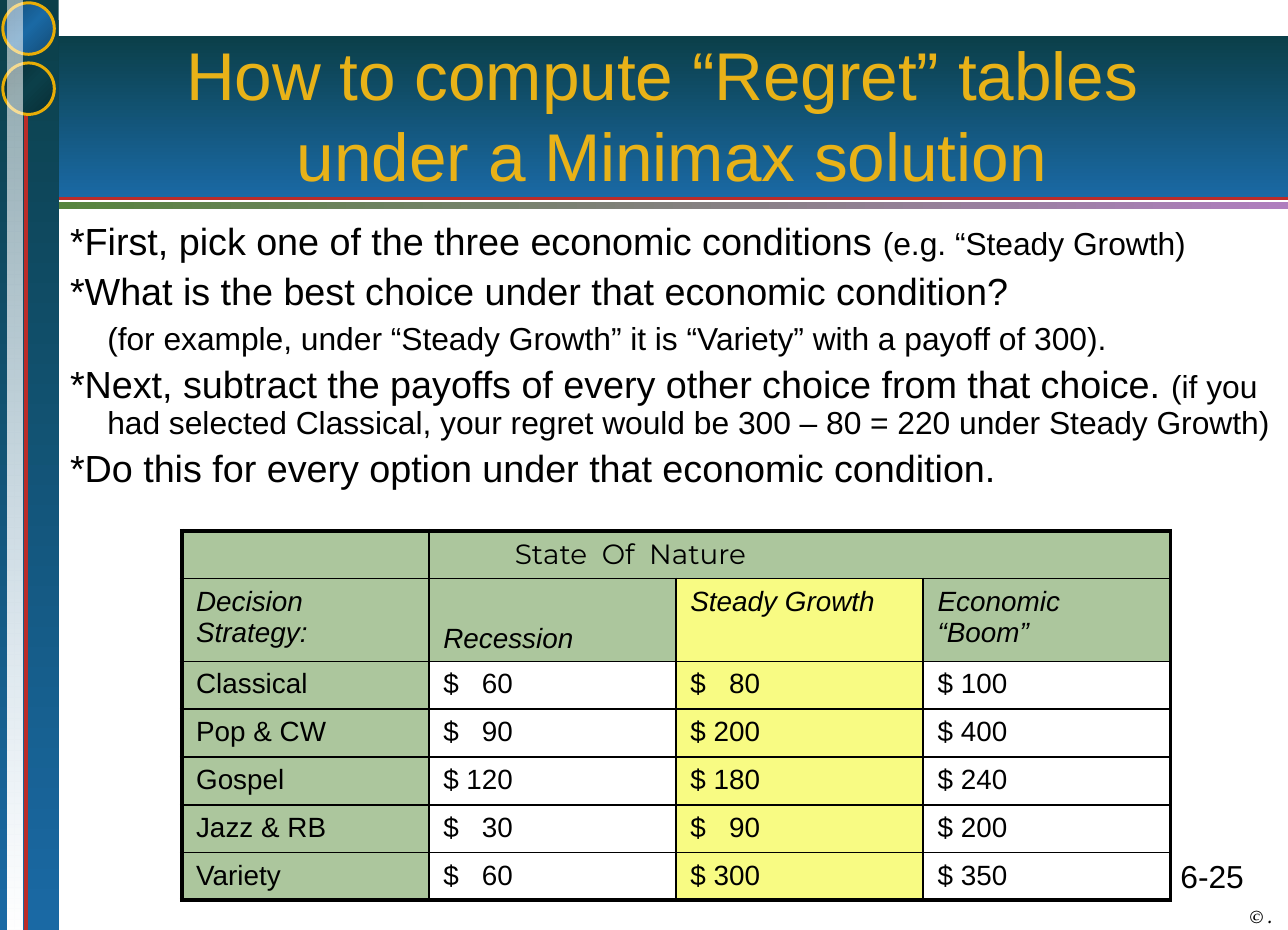
from dataclasses import dataclass

from lxml import etree
from pptx import Presentation
from pptx.dml.color import RGBColor
from pptx.enum.shapes import MSO_CONNECTOR as Connector, MSO_SHAPE as Shape
from pptx.enum.text import MSO_ANCHOR as Anchor, PP_ALIGN as Align
from pptx.oxml import parse_xml
from pptx.oxml.ns import nsdecls, qn
from pptx.util import Inches, Pt


@dataclass(frozen=True)
class Theme:
    sans: str = "Arial"
    display: str = "Montserrat"
    serif: str = "TeX Gyre Pagella"
    black: str = "000000"
    white: str = "FFFFFF"
    gold: str = "E8AD06"
    title_gold: str = "E8B218"
    red: str = "BB2C29"
    green: str = "5A8F3D"
    yellow: str = "F2F808"
    band: tuple = ("0B3F49", "1A69A4")
    stripe: tuple = ("538438", "AF7EBE")
    teal_disc: tuple = ("082D34", "0B3F49", "082D34")
    blue_disc: tuple = ("134B75", "1A69A4", "134B75")
    title_size: float = 34
    body_size: float = 19
    note_size: float = 16
    table_size: float = 14
    small_size: float = 9


THEME = Theme()

STEPS = [
    [("*First, pick one of the three economic conditions ", THEME.body_size),
     ("(e.g. “Steady Growth)", THEME.note_size)],
    [("*What is the best choice under that economic condition?", THEME.body_size)],
    [("(for example, under “Steady Growth” it is “Variety” with a payoff of 300).",
      THEME.note_size)],
    [("*Next, subtract the payoffs of every other choice from that choice. ",
      THEME.body_size),
     ("(if you had selected Classical, your regret would be 300 – 80 = 220 "
      "under Steady Growth)", THEME.note_size)],
    [("*Do this for every option under that economic condition.", THEME.body_size)],
]
PAYOFFS = [
    ["", "State  Of  Nature", "", ""],
    ["Decision Strategy:", "Recession", "Steady Growth", "Economic “Boom”"],
    ["Classical", "$   60", "$   80", "$ 100"],
    ["Pop & CW", "$   90", "$ 200", "$ 400"],
    ["Gospel", "$ 120", "$ 180", "$ 240"],
    ["Jazz & RB", "$   30", "$   90", "$ 200"],
    ["Variety", "$   60", "$ 300", "$ 350"],
]


def gradient_shape(slide, kind, box, colors, angle, outline=None, first_alpha=100):
    """Add a shape with evenly spaced gradient stops; angle is clockwise degrees."""
    shape = slide.shapes.add_shape(kind, *map(Inches, box))
    shape.shadow.inherit = False
    shape.fill.gradient()
    shape.fill.gradient_angle = 360 - angle
    stops = shape._element.spPr.find(qn("a:gradFill")).find(qn("a:gsLst"))
    for stop in list(stops):
        stops.remove(stop)
    for index, color in enumerate(colors):
        position = 100000 * index // (len(colors) - 1)
        stop = etree.SubElement(stops, qn("a:gs"), pos=str(position))
        paint = etree.SubElement(stop, qn("a:srgbClr"), val=color)
        if index == 0 and first_alpha < 100:
            etree.SubElement(paint, qn("a:alpha"), val=str(first_alpha * 1000))
    if outline:
        shape.line.color.rgb = RGBColor.from_string(outline)
        shape.line.width = Pt(1.5)
    else:
        shape.line.fill.background()


def rule(slide, start, end, width):
    line = slide.shapes.add_connector(
        Connector.STRAIGHT, *map(Inches, (*start, *end)))
    line.line.color.rgb = RGBColor.from_string(THEME.red)
    line.line.width = Pt(width)
    etree.SubElement(line._element.spPr, qn("a:effectLst"))


def text_frame_in(slide, box, margins=(0.09, 0.04), anchor=Anchor.TOP, wrap=True):
    frame = slide.shapes.add_textbox(*map(Inches, box)).text_frame
    frame.word_wrap = wrap
    frame.vertical_anchor = anchor
    frame.margin_left = frame.margin_right = Inches(margins[0])
    frame.margin_top = frame.margin_bottom = Inches(margins[1])
    return frame


def style(run, size, font=THEME.sans, color=THEME.black, bold=False, italic=False):
    run.font.size = Pt(size)
    run.font.name = font
    run.font.color.rgb = RGBColor.from_string(color)
    run.font.bold = bold
    run.font.italic = italic


def add_banner(slide, left, top, width, height):
    gradient_shape(slide, Shape.RECTANGLE, (left, top, width, height), THEME.band, 90)
    gradient_shape(slide, Shape.RECTANGLE, (left, top + height + 0.03, width, 0.05),
                   THEME.stripe, 0)
    rule(slide, (left, top + height + 0.01), (left + width, top + height + 0.01), 1.5)


def add_sidebar(slide, left, top, width, height):
    gradient_shape(slide, Shape.RECTANGLE, (left, top, width, height), THEME.band, 90)
    rule(slide, (left + 0.18, top + 0.79), (left + 0.18, top + height), 2.25)
    for offset, colors in ((0.44, THEME.teal_disc), (0.02, THEME.blue_disc)):
        gradient_shape(slide, Shape.OVAL, (left + 0.02, top + offset, 0.36, 0.36),
                       colors, 45, THEME.gold)
    gradient_shape(slide, Shape.RECTANGLE, (left + 0.05, top, 0.11, height),
                   (THEME.white, THEME.white), 90, first_alpha=52)


def add_title(slide, *box):
    frame = text_frame_in(slide, box, anchor=Anchor.MIDDLE)
    paragraph = frame.paragraphs[0]
    paragraph.text = "How to compute “Regret” tables \vunder a Minimax solution"
    paragraph.alignment = Align.CENTER
    for run in paragraph.runs:
        style(run, THEME.title_size, color=THEME.title_gold)
        fill = run._r.get_or_add_rPr().find(qn("a:solidFill"))
        fill.addnext(parse_xml(
            f'<a:effectLst {nsdecls("a")}><a:outerShdw dist="38100" dir="2700000">'
            f'<a:srgbClr val="{THEME.black}"/></a:outerShdw></a:effectLst>'))


def add_steps(slide, *box):
    frame = text_frame_in(slide, box)
    for index, parts in enumerate(STEPS):
        paragraph = frame.paragraphs[0] if index == 0 else frame.add_paragraph()
        paragraph.line_spacing = 0.9
        paragraph.space_before = Pt(4.5)
        hanging = parts[0][0].startswith("*")
        properties = paragraph._p.get_or_add_pPr()
        properties.set("marL", str(Inches(0.26)))
        properties.set("indent", str(Inches(-0.26 if hanging else 0)))
        for text, size in parts:
            run = paragraph.add_run()
            run.text = text
            style(run, size)


def set_borders(cell, widths):
    """Draw left, right, top and bottom borders of the given point widths."""
    properties = cell._tc.get_or_add_tcPr()
    for index, (side, width) in enumerate(zip("LRTB", widths)):
        properties.insert(index, parse_xml(
            f'<a:ln{side} {nsdecls("a")} w="{Pt(width)}"><a:solidFill>'
            f'<a:srgbClr val="{THEME.black}"/></a:solidFill></a:ln{side}>'))


def set_tint(cell, color):
    cell.fill.solid()
    cell.fill.fore_color.rgb = RGBColor.from_string(color)
    paint = cell._tc.tcPr.find(qn("a:solidFill")).find(qn("a:srgbClr"))
    etree.SubElement(paint, qn("a:alpha"), val="50000")


def add_payoff_table(slide, left, top, width):
    heights = [0.33, 0.58] + [0.32] * 5
    last_row, last_column = len(PAYOFFS) - 1, len(PAYOFFS[0]) - 1
    table = slide.shapes.add_table(
        last_row + 1, last_column + 1,
        *map(Inches, (left, top, width, sum(heights)))).table
    table.first_row = table.horz_banding = False
    for row, height in zip(table.rows, heights):
        row.height = Inches(height)
    for r, texts in enumerate(PAYOFFS):
        for c, text in enumerate(texts):
            cell = table.cell(r, c)
            if c == 2 and r > 0:
                set_tint(cell, THEME.yellow)
            elif r < 2 or c == 0:
                set_tint(cell, THEME.green)
            else:
                cell.fill.background()
            outer = (c == 0, c == last_column, r == 0, r == last_row)
            set_borders(cell, [2.25 if edge else 1 for edge in outer])
            paragraph = cell.text_frame.paragraphs[0]
            paragraph.font.size = Pt(THEME.table_size)
            if text:
                paragraph.text = text
                style(paragraph.runs[0], THEME.table_size,
                      font=THEME.display if r == 0 else THEME.sans, italic=r == 1)
    state_heading = table.cell(0, 1)
    state_heading.merge(table.cell(0, last_column))
    set_borders_right = state_heading._tc.tcPr.find(qn("a:lnR"))
    set_borders_right.set("w", str(Pt(2.25)))
    state_heading.text_frame.paragraphs[0]._p.get_or_add_pPr().set(
        "marL", str(Inches(0.5)))
    table.cell(1, 1).vertical_anchor = Anchor.BOTTOM


def add_footer(slide, left, top):
    number = text_frame_in(slide, (left, top, 0.79, 0.37), (0.1, 0.05))
    mark = text_frame_in(slide, (left + 0.73, top + 0.39, 0.16, 0.15), (0, 0),
                         Anchor.BOTTOM, wrap=False)
    for frame, text in ((number, "6-25"), (mark, "© .")):
        frame.text = text
        frame.paragraphs[0].alignment = Align.RIGHT
    style(number.paragraphs[0].runs[0], THEME.note_size)
    style(mark.paragraphs[0].runs[0], THEME.small_size, THEME.serif,
          bold=True, italic=True)


def main():
    presentation = Presentation()
    presentation.slide_width, presentation.slide_height = Inches(9), Inches(6.5)
    slide = presentation.slides.add_slide(presentation.slide_layouts[6])
    add_banner(slide, 0, 0.25, 9, 1.13)
    add_sidebar(slide, 0, 0, 0.41, 6.5)
    add_footer(slide, 8, 5.94)
    add_title(slide, 0.39, 0.26, 8.61, 1.08)
    add_steps(slide, 0.4, 1.52, 8.6, 2.07)
    add_payoff_table(slide, 1.27, 3.71, 6.91)
    presentation.save("out.pptx")


if __name__ == "__main__":
    main()
